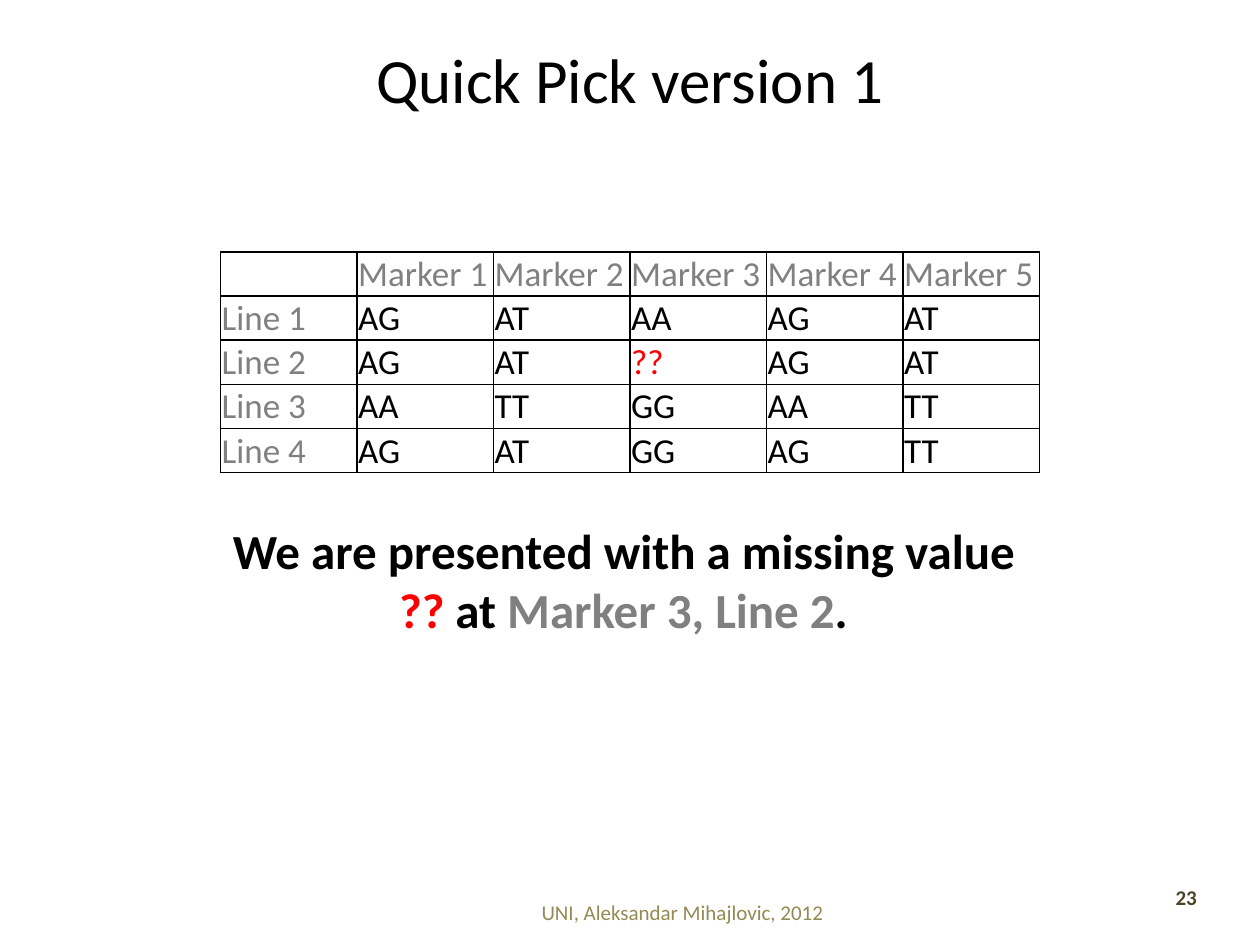
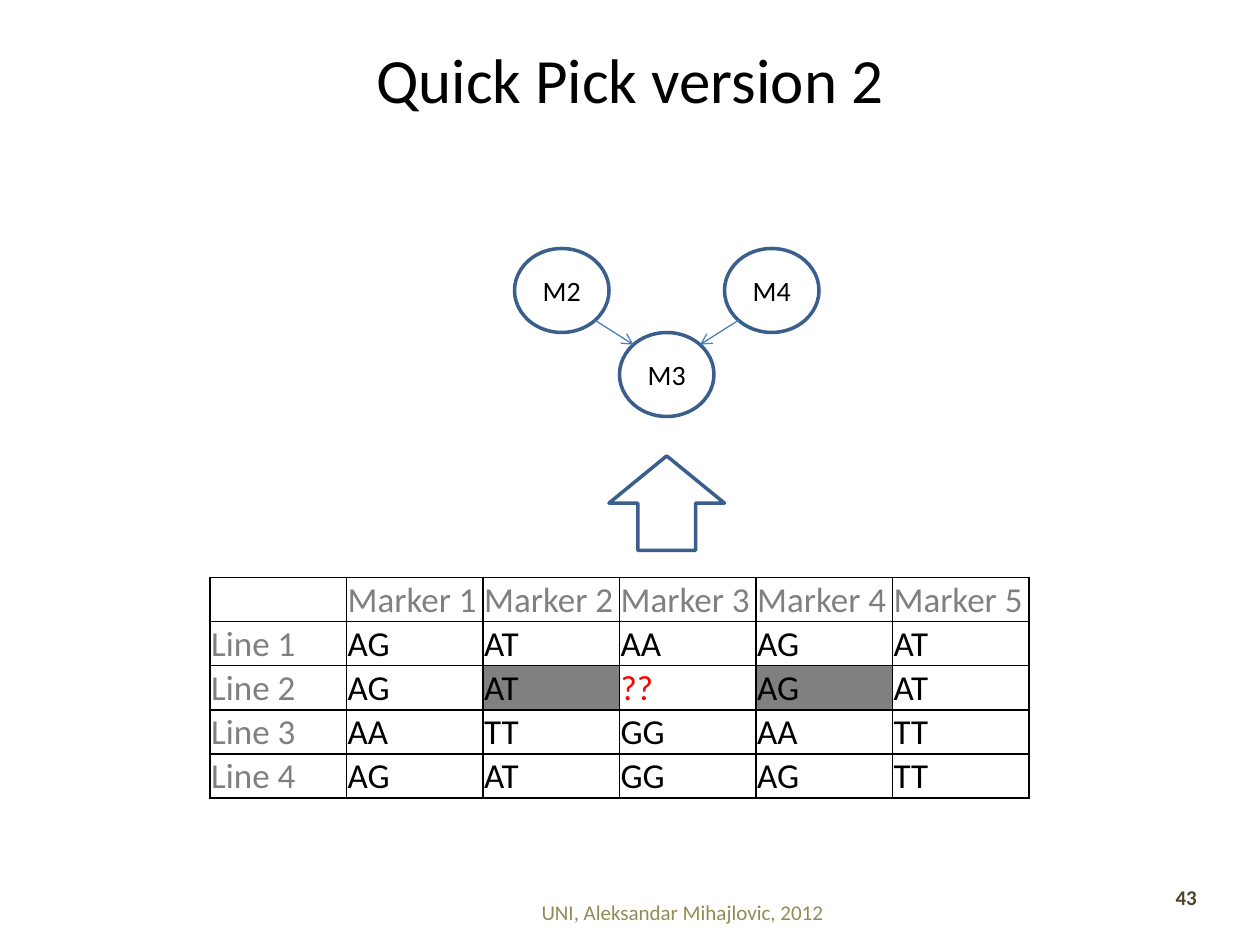
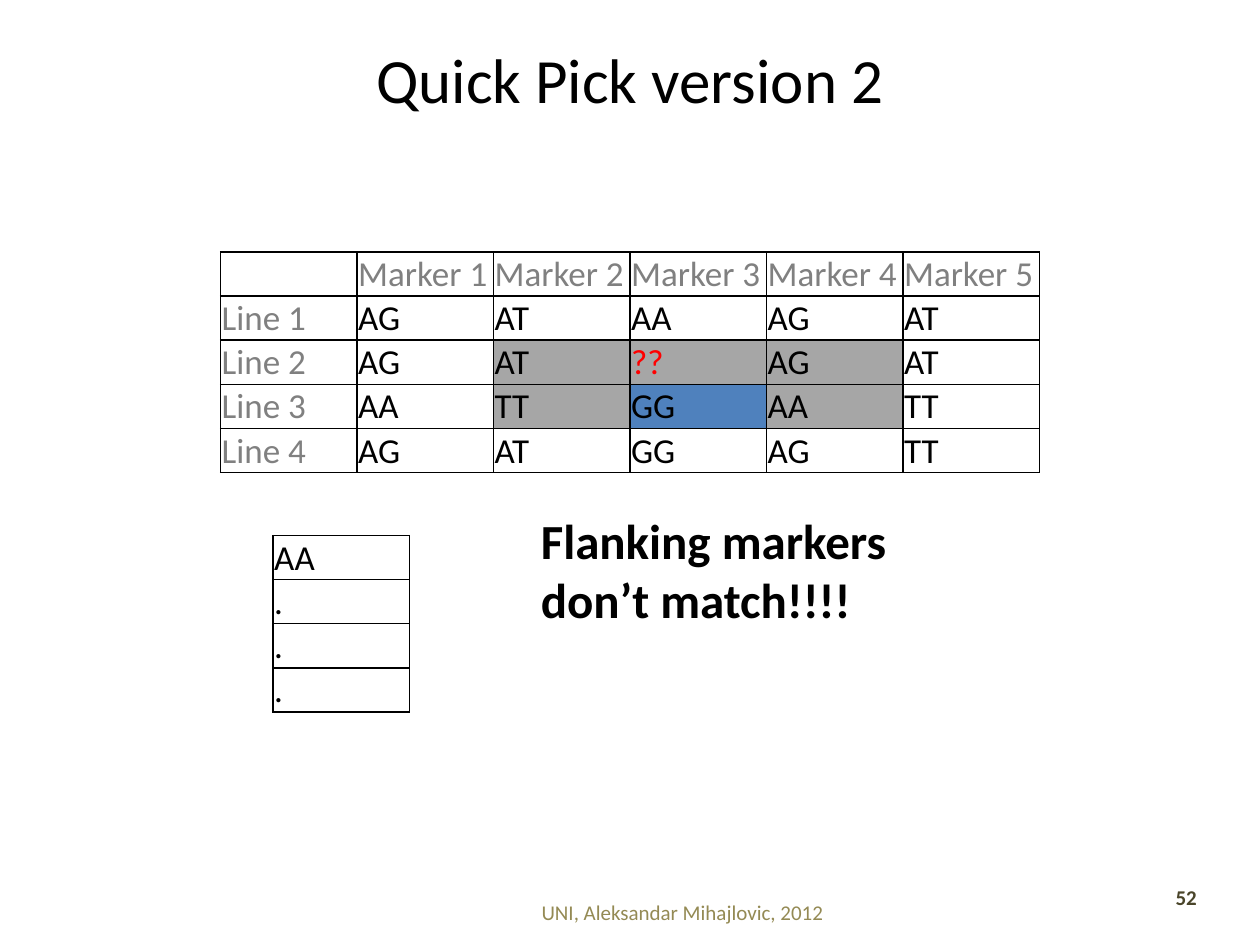
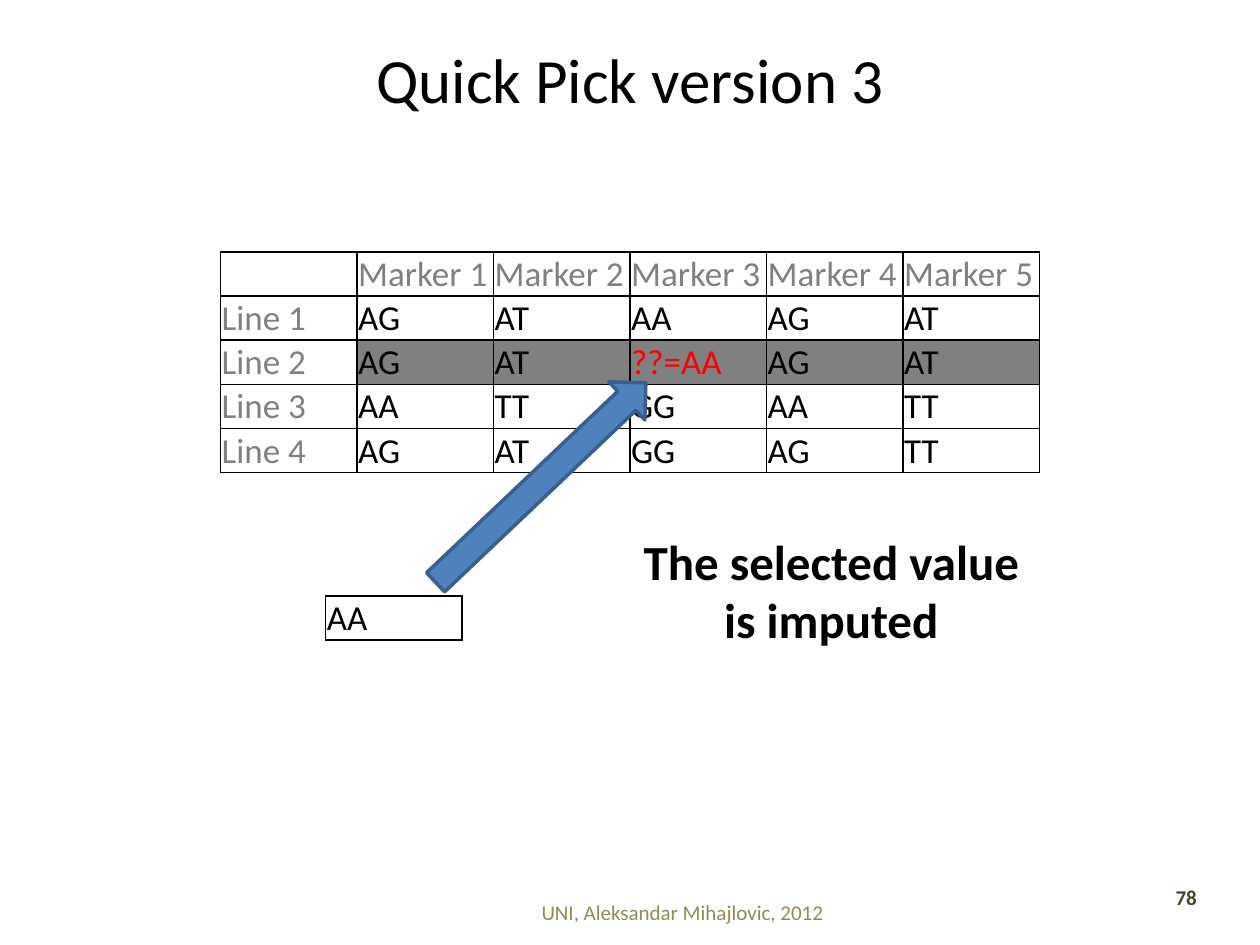
from lxml import etree
from pptx import Presentation
from pptx.dml.color import RGBColor
from pptx.enum.shapes import MSO_CONNECTOR, MSO_SHAPE
from pptx.enum.text import MSO_ANCHOR, MSO_AUTO_SIZE, PP_ALIGN
from pptx.oxml.ns import qn
from pptx.util import Pt

BLACK = RGBColor(0x00, 0x00, 0x00)
GRAY = RGBColor(0x80, 0x80, 0x80)
LIGHT_GRAY = RGBColor(0xA6, 0xA6, 0xA6)
RED = RGBColor(0xFF, 0x00, 0x00)
BLUE = RGBColor(0x4F, 0x81, 0xBD)
OUTLINE = RGBColor(0x3A, 0x5F, 0x8C)
LINK = RGBColor(0x4B, 0x7E, 0xBC)
FOOTER = RGBColor(0x94, 0x8A, 0x54)
NUMBER = RGBColor(0x4A, 0x45, 0x2A)

LEFT, CENTER, RIGHT = PP_ALIGN.LEFT, PP_ALIGN.CENTER, PP_ALIGN.RIGHT
TOP, MIDDLE, BOTTOM = MSO_ANCHOR.TOP, MSO_ANCHOR.MIDDLE, MSO_ANCHOR.BOTTOM
GROW = MSO_AUTO_SIZE.SHAPE_TO_FIT_TEXT
OVAL, UP_ARROW = MSO_SHAPE.OVAL, MSO_SHAPE.UP_ARROW
STRAIGHT = MSO_CONNECTOR.STRAIGHT
TITLE_ONLY = 5

COLUMN_WIDTH = 78
ROW_HEIGHT = 25.2
TABLE_SPOT = (126, 144)
MARKER_3 = 3
LINE_2 = 2
GENOTYPES = [
    ["AG", "AT", "AA", "AG", "AT"],
    ["AG", "AT", "??", "AG", "AT"],
    ["AA", "TT", "GG", "AA", "TT"],
    ["AG", "AT", "GG", "AG", "TT"],
]
CELL_FORMAT = {
    "margin_left": Pt(0.72),
    "margin_right": Pt(0.72),
    "margin_top": Pt(0.72),
    "margin_bottom": 0,
    "vertical_anchor": BOTTOM,
}
PLAIN_TABLE = {"first_row": False, "horz_banding": False}


def set_values(target, values):
    for name, value in values.items():
        setattr(target, name, value)


def add_span(para, text, size, color=BLACK, bold=False):
    span = para.add_run()
    span.text = text
    set_values(span.font, {"name": "Calibri", "size": Pt(size), "bold": bold})
    span.font.color.rgb = color


def place(box, frame):
    names = ("left", "top", "width", "height")
    set_values(box, dict(zip(names, map(Pt, frame))))


def add_text(page, frame, text, size, color=BLACK, bold=False, align=LEFT, **values):
    box = page.shapes.add_textbox(*map(Pt, frame))
    set_values(box.text_frame, {"word_wrap": True, **values})
    para = box.text_frame.paragraphs[0]
    para.alignment = align
    add_span(para, text, size, color, bold)
    return box


def add_message(page, frame, text, align=LEFT):
    return add_text(page, frame, text, 28, bold=True, align=align, auto_size=GROW)


def add_page(deck, title, number):
    page = deck.slides.add_slide(deck.slide_layouts[TITLE_ONLY])
    heading = page.shapes.title
    place(heading, (36, 0, 648, 90))
    heading.text_frame.vertical_anchor = MIDDLE
    para = heading.text_frame.paragraphs[0]
    para.alignment = CENTER
    add_span(para, title, 36)
    add_text(page, (182, 507, 416, 28), "UNI, Aleksandar Mihajlovic, 2012", 12, FOOTER,
             align=CENTER, vertical_anchor=MIDDLE)
    add_text(page, (627, 502, 64, 28), number, 12, NUMBER, bold=True, align=RIGHT)
    return page


def add_borders(cell):
    properties = cell._tc.get_or_add_tcPr()
    for side in ("lnL", "lnR", "lnT", "lnB"):
        line = etree.SubElement(properties, qn(f"a:{side}"), w=str(Pt(1)))
        fill = etree.SubElement(line, qn("a:solidFill"))
        etree.SubElement(fill, qn("a:srgbClr"), val=str(BLACK))


def text_color(text):
    if text.startswith("??"):
        return RED
    return GRAY if text.startswith(("Marker", "Line")) else BLACK


def add_grid(page, spot, rows, fills=None):
    fills = fills or {}
    size = (COLUMN_WIDTH * len(rows[0]), ROW_HEIGHT * len(rows))
    table = page.shapes.add_table(len(rows), len(rows[0]), *map(Pt, spot + size)).table
    set_values(table, PLAIN_TABLE)
    for r, row in enumerate(rows):
        for c, text in enumerate(row):
            cell = table.cell(r, c)
            set_values(cell, CELL_FORMAT)
            add_borders(cell)
            if (r, c) in fills:
                cell.fill.solid()
                cell.fill.fore_color.rgb = fills[r, c]
            else:
                cell.fill.background()
            if text:
                add_span(cell.text_frame.paragraphs[0], text, 20, text_color(text))


def add_genotypes(page, spot=TABLE_SPOT, fills=None, missing="??"):
    rows = [[""] + [f"Marker {n}" for n in range(1, 6)]]
    rows += [[f"Line {n}"] + row for n, row in enumerate(GENOTYPES, 1)]
    rows[LINE_2][MARKER_3] = missing
    add_grid(page, spot, rows, fills)


def add_outlined(page, kind, frame, fill=None):
    shape = page.shapes.add_shape(kind, *map(Pt, frame))
    shape.shadow.inherit = False
    if fill is None:
        shape.fill.background()
    else:
        shape.fill.solid()
        shape.fill.fore_color.rgb = fill
    shape.line.color.rgb = OUTLINE
    shape.line.width = Pt(2)
    return shape


def add_node(page, left, top, label):
    node = add_outlined(page, OVAL, (left, top, 54, 48))
    set_values(node.text_frame, {"margin_left": 0, "margin_right": 0,
                                 "vertical_anchor": MIDDLE})
    para = node.text_frame.paragraphs[0]
    para.alignment = CENTER
    add_span(para, label, 16)


def add_link(page, start, end):
    link = page.shapes.add_connector(STRAIGHT, *map(Pt, start + end))
    link.line.color.rgb = LINK
    link.line.width = Pt(0.75)
    etree.SubElement(link.line._get_or_add_ln(), qn("a:tailEnd"), type="arrow")
    etree.SubElement(link._element.spPr, qn("a:effectLst"))


def build_missing_value(deck):
    page = add_page(deck, "Quick Pick version 1", "23")
    add_genotypes(page)
    box = add_message(page, (126, 294, 474, 75), "We are presented with a missing value")
    para = box.text_frame.add_paragraph()
    para._p.get_or_add_pPr().set("marL", str(Pt(95)))
    for text, color in (("??", RED), (" at ", BLACK), ("Marker 3, Line 2", GRAY), (".", BLACK)):
        add_span(para, text, 28, color, True)


def build_flanking_model(deck):
    page = add_page(deck, "Quick Pick version 2", "43")
    add_genotypes(page, (120, 330), {(LINE_2, c): GRAY for c in (2, 4)})
    add_outlined(page, UP_ARROW, (348, 260.5, 66, 54))
    for left, top, label in ((354, 190, "M3"), (294, 142, "M2"), (414, 142, "M4")):
        add_node(page, left, top, label)
    add_link(page, (340, 183), (362, 197))
    add_link(page, (422, 183), (400, 197))


def build_mismatch(deck):
    page = add_page(deck, "Quick Pick version 2", "52")
    fills = {(r, c): LIGHT_GRAY for r in (2, 3) for c in (2, 3, 4)}
    fills[3, MARKER_3] = BLUE
    add_genotypes(page, fills=fills)
    add_grid(page, (156, 306), [["AA"], ["."], ["."], ["."]])
    add_message(page, (302, 288, 252, 85), "Flanking markers don’t match!!!!")


def build_imputation(deck):
    page = add_page(deck, "Quick Pick version 3", "78")
    add_genotypes(page, fills={(LINE_2, c): GRAY for c in range(1, 6)}, missing="??=AA")
    add_message(page, (352, 300, 246, 75), "The selected value is imputed", CENTER)
    add_grid(page, (186, 340.5), [["AA"]])
    arrow = add_outlined(page, UP_ARROW, (294, 193, 30, 165.6), BLUE)
    arrow.rotation = 46.5


def main():
    deck = Presentation()
    deck.slide_width, deck.slide_height = Pt(720), Pt(540)
    build_missing_value(deck)
    build_flanking_model(deck)
    build_mismatch(deck)
    build_imputation(deck)
    deck.save("out.pptx")


if __name__ == "__main__":
    main()
